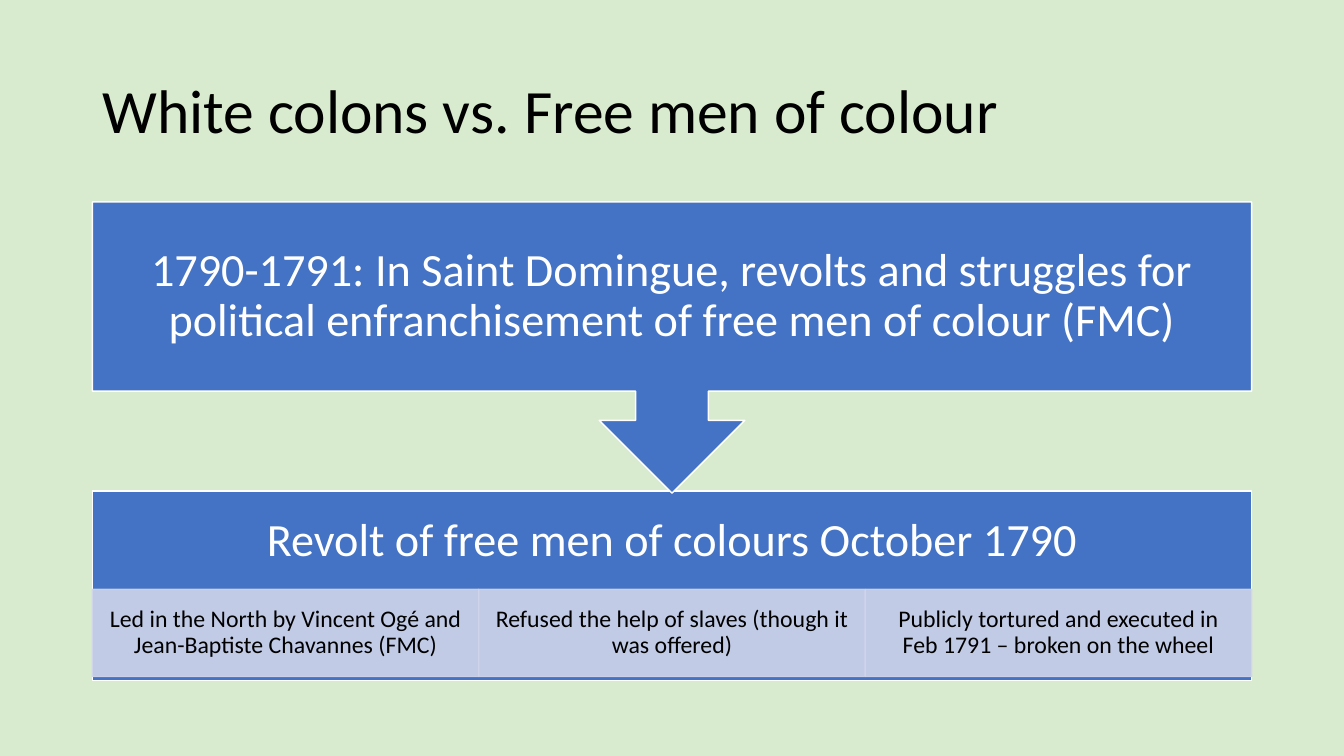
from lxml.etree import SubElement
from pptx import Presentation
from pptx.dml.color import RGBColor
from pptx.enum.shapes import MSO_SHAPE
from pptx.enum.text import MSO_ANCHOR, PP_ALIGN
from pptx.oxml.ns import qn
from pptx.util import Pt

# Content
TITLE = "White colons vs. Free men of colour"
CAUSE = ("1790-1791: In Saint Domingue, revolts and struggles for political "
         "enfranchisement of free men of colour (FMC)")
REVOLT = "Revolt of free men of colours October 1790"
DETAILS = [
    "Led in the North by Vincent Ogé and Jean-Baptiste Chavannes (FMC)",
    "Refused the help of slaves (though it was offered)",
    "Publicly tortured and executed in Feb 1791 – broken on the wheel",
]

# Style
FONT = "Calibri"
PALE_GREEN = RGBColor(0xD9, 0xEB, 0xCE)
BLUE = RGBColor(0x44, 0x72, 0xC4)
PALE_BLUE = RGBColor(0xCF, 0xD5, 0xEA)
WHITE = RGBColor(0xFF, 0xFF, 0xFF)
BLACK = RGBColor(0x00, 0x00, 0x00)

# Layout in points
LEFT, WIDTH = 66, 828
CAUSE_TOP, CAUSE_HEIGHT, CALLOUT_HEIGHT = 144.2, 135.3, 208.1
REVOLT_TOP, REVOLT_HEIGHT, HEADING_HEIGHT = 350.6, 135.3, 73.1
DETAIL_TOP, DETAIL_HEIGHT = 421, 62.3
DETAIL_WIDTH = WIDTH / len(DETAILS)


def add_block(slide, kind, box, fill, line, opacity=100):
    shape = slide.shapes.add_shape(kind, *map(Pt, box))
    shape.shadow.inherit = False
    shape.fill.solid()
    shape.fill.fore_color.rgb = fill
    shape.line.color.rgb = line
    shape.line.width = Pt(1)
    if opacity < 100:
        for color in shape._element.spPr.iter(qn("a:srgbClr")):
            SubElement(color, qn("a:alpha"), val=str(opacity * 1000))
    return shape


def add_text(slide, text, box, size, color, margins, alignment=PP_ALIGN.CENTER):
    frame = slide.shapes.add_textbox(*map(Pt, box)).text_frame
    frame.word_wrap = True
    frame.vertical_anchor = MSO_ANCHOR.MIDDLE
    frame.margin_left = frame.margin_right = Pt(margins[0])
    frame.margin_top = frame.margin_bottom = Pt(margins[1])
    frame.text = text
    paragraph = frame.paragraphs[0]
    paragraph.alignment = alignment
    paragraph.line_spacing = 0.9
    font = paragraph.runs[0].font
    font.name, font.size = FONT, Pt(size)
    font.color.rgb = color


def main():
    presentation = Presentation()
    presentation.slide_width, presentation.slide_height = Pt(960), Pt(540)
    slide = presentation.slides.add_slide(presentation.slide_layouts[6])
    slide.background.fill.solid()
    slide.background.fill.fore_color.rgb = PALE_GREEN

    # Title
    add_text(slide, TITLE, (LEFT, 28.8, WIDTH, 104.4), 44, BLACK, (7.2, 3.6),
             PP_ALIGN.LEFT)

    # Revolt block with its row of details
    add_block(slide, MSO_SHAPE.RECTANGLE,
              (LEFT, REVOLT_TOP, WIDTH, REVOLT_HEIGHT), BLUE, WHITE)
    add_text(slide, REVOLT, (LEFT, REVOLT_TOP, WIDTH, HEADING_HEIGHT),
             33, WHITE, (18.5, 18.5))
    for index, detail in enumerate(DETAILS):
        box = (LEFT + index * DETAIL_WIDTH, DETAIL_TOP, DETAIL_WIDTH, DETAIL_HEIGHT)
        add_block(slide, MSO_SHAPE.RECTANGLE, box, PALE_BLUE, PALE_BLUE, 90)
        add_text(slide, detail, box, 17, BLACK, (9.4, 1.5))

    # Cause block pointing down to the revolt
    callout = add_block(slide, MSO_SHAPE.UP_ARROW_CALLOUT,
                        (LEFT, CAUSE_TOP, WIDTH, CALLOUT_HEIGHT), BLUE, WHITE)
    callout.rotation = 180
    add_text(slide, CAUSE, (LEFT, CAUSE_TOP, WIDTH, CAUSE_HEIGHT),
             33, WHITE, (18.5, 18.5))

    presentation.save("out.pptx")


if __name__ == "__main__":
    main()
